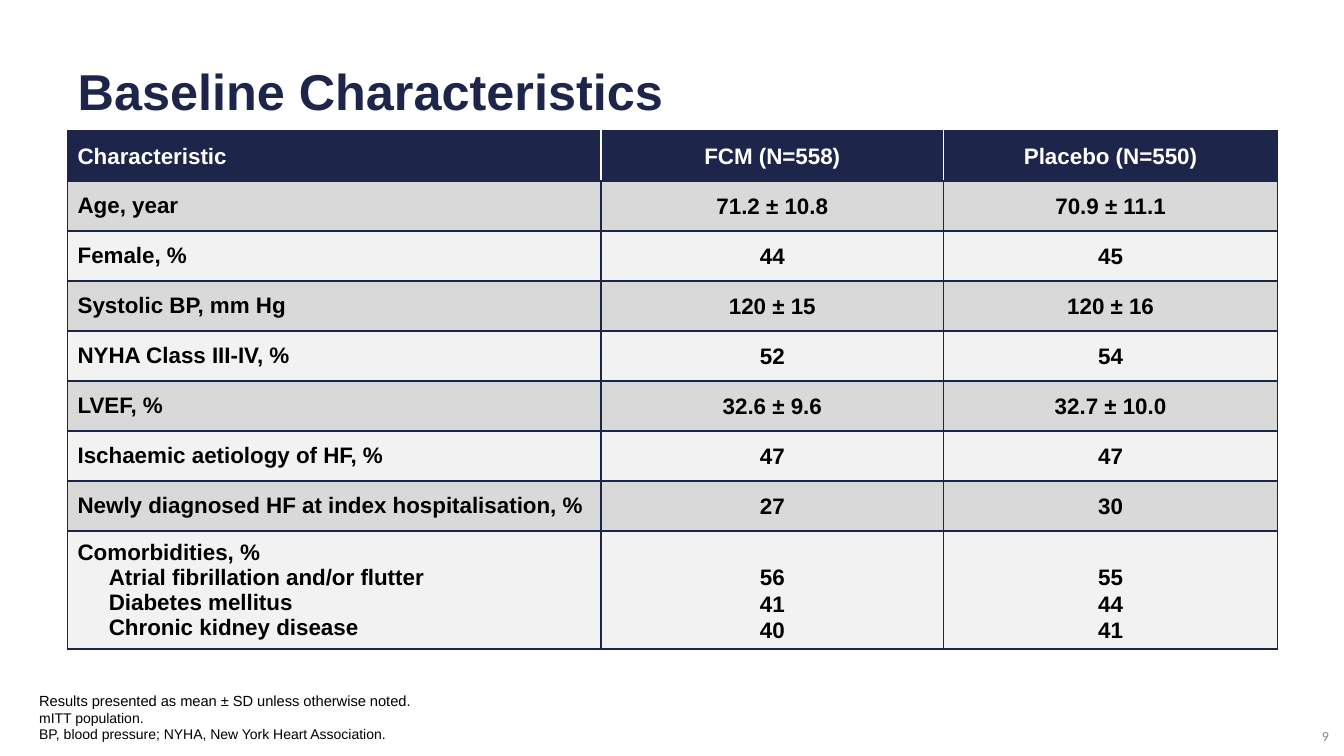
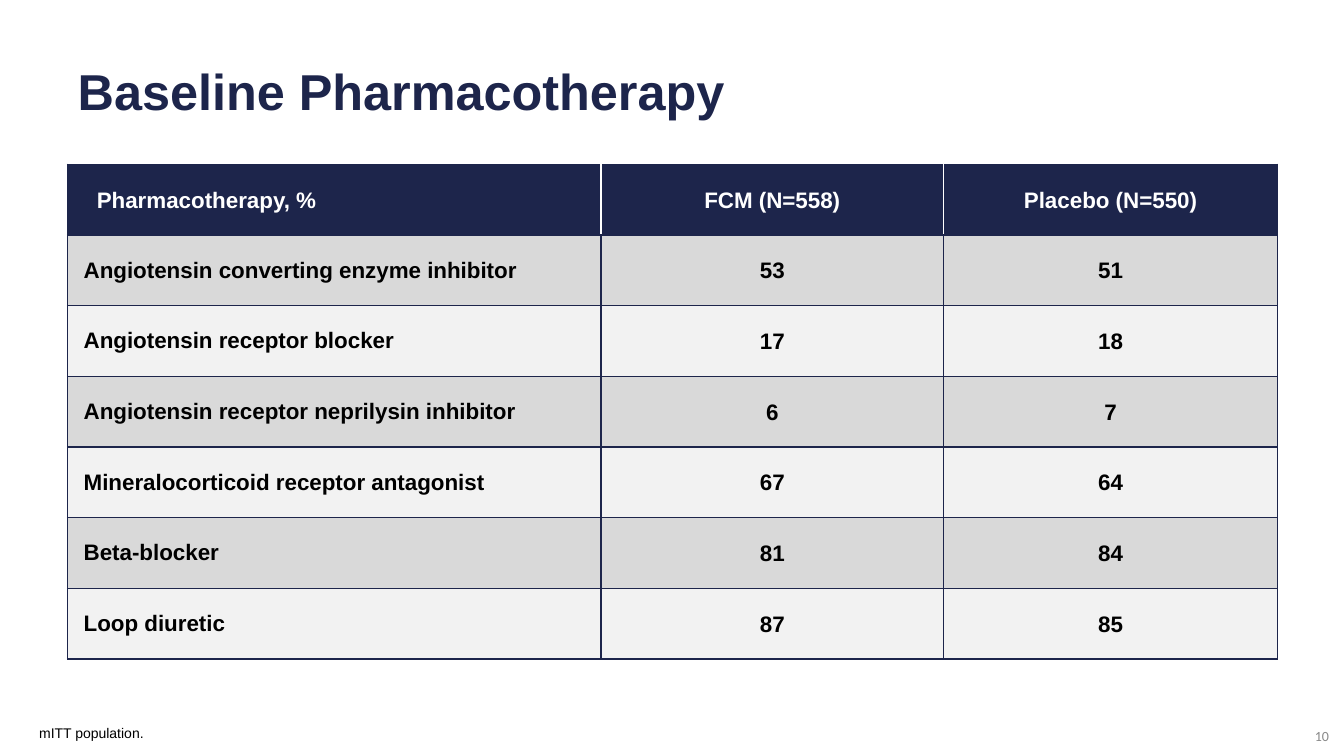
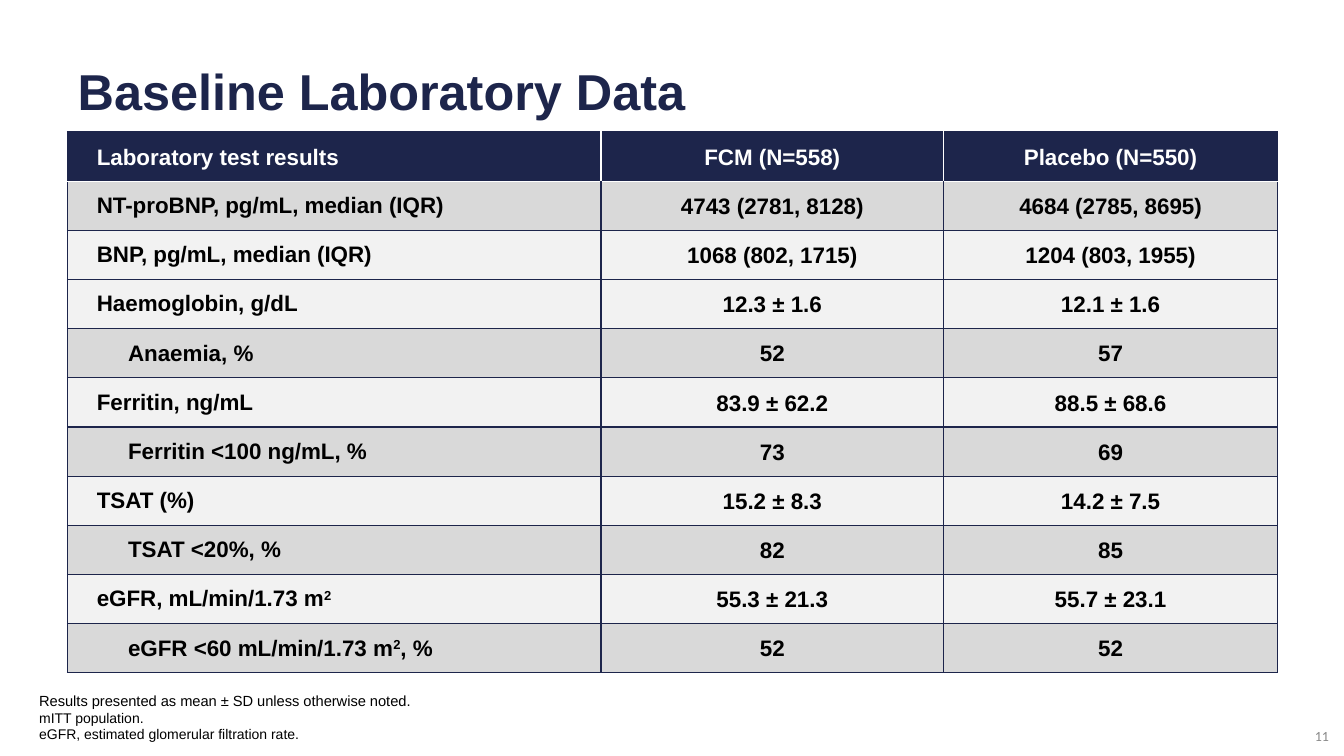
from lxml import etree
from pptx import Presentation
from pptx.dml.color import RGBColor as RGB
from pptx.enum.text import MSO_ANCHOR as ANCHOR, PP_ALIGN as ALIGN
from pptx.oxml.ns import qn
from pptx.util import Pt

PX = 9144  # 100 px to the inch
COLORS = {
    "navy": "1D254B", "white": "FFFFFF", "black": "000000",
    "dark": "D9D9D9", "light": "F2F2F2", "gray": "898989",
}
TITLE = {"name": "Arial", "size": Pt(36), "bold": True, "color": "navy"}
NUMBER = {"name": "Calibri", "size": Pt(10), "color": "gray"}
NOTE = {"name": "Arial", "color": "black"}
HEAD = {"name": "Arial", "size": Pt(16), "bold": True, "color": "white"}
BODY = {**HEAD, "color": "black"}

COLUMNS = [529, 340, 331]
ARMS = ["FCM (N=558)", "Placebo (N=550)"]
TALL_ROW = 117
VALUE_TOP = 27  # lowers the values by one line, below the group label
MEAN_SD = ("Results presented as mean ± SD unless otherwise noted.", 10.5)
MITT = ("mITT population.", 10)

# Each row: indent of its label, label, one value per arm.
# A line break starts a paragraph, carets enclose a superscript.
SLIDES = [
    {
        "number": 9, "title": "Baseline Characteristics",
        "top": 130, "height": 514, "margin": 2, "rule": "navy",
        "head": (0, "Characteristic"),
        "shades": ["dark", "light"] * 4,
        "rows": [
            (0, "Age, year", "71.2 ± 10.8", "70.9 ± 11.1"),
            (0, "Female, %", "44", "45"),
            (0, "Systolic BP, mm Hg", "120 ± 15", "120 ± 16"),
            (0, "NYHA Class III-IV, %", "52", "54"),
            (0, "LVEF, %", "32.6 ± 9.6", "32.7 ± 10.0"),
            (0, "Ischaemic aetiology of HF, %", "47", "47"),
            (0, "Newly diagnosed HF at index hospitalisation, %", "27", "30"),
            (0, "Comorbidities, %\nAtrial fibrillation and/or flutter\n"
                "Diabetes mellitus\nChronic kidney disease",
             "56\n41\n40", "55\n44\n41"),
        ],
        "note_box": (29, 681, 1261, 61),
        "notes": [MEAN_SD, MITT,
                  ("BP, blood pressure; NYHA, New York Heart Association.", 10)],
    },
    {
        "number": 10, "title": "Baseline Pharmacotherapy",
        "top": 163, "height": 491, "margin": 0, "rule": "navy",
        "head": (19, "Pharmacotherapy, %"),
        "shades": ["dark", "light"] * 3,
        "rows": [
            (6, "Angiotensin converting enzyme inhibitor", "53", "51"),
            (6, "Angiotensin receptor blocker", "17", "18"),
            (6, "Angiotensin receptor neprilysin inhibitor", "6", "7"),
            (6, "Mineralocorticoid receptor antagonist", "67", "64"),
            (6, "Beta-blocker", "81", "84"),
            (6, "Loop diuretic", "87", "85"),
        ],
        "note_box": (29, 714, 948, 27),
        "notes": [MITT],
    },
    {
        "number": 11, "title": "Baseline Laboratory Data",
        "top": 131, "height": 537, "margin": 0, "rule": "white",
        "head": (19, "Laboratory test results"),
        "shades": ["dark", "light"] + ["light", "dark"] * 4,
        "rows": [
            (19, "NT-proBNP, pg/mL, median (IQR)",
             "4743 (2781, 8128)", "4684 (2785, 8695)"),
            (19, "BNP, pg/mL, median (IQR)",
             "1068 (802, 1715)", "1204 (803, 1955)"),
            (19, "Haemoglobin, g/dL", "12.3 ± 1.6", "12.1 ± 1.6"),
            (50, "Anaemia, %", "52", "57"),
            (19, "Ferritin, ng/mL", "83.9 ± 62.2", "88.5 ± 68.6"),
            (50, "Ferritin <100 ng/mL, %", "73", "69"),
            (19, "TSAT (%)", "15.2 ± 8.3", "14.2 ± 7.5"),
            (50, "TSAT <20%, %", "82", "85"),
            (19, "eGFR, mL/min/1.73 m^2^", "55.3 ± 21.3", "55.7 ± 23.1"),
            (50, "eGFR <60 mL/min/1.73 m^2^, %", "52", "52"),
        ],
        "note_box": (29, 681, 1261, 61),
        "notes": [MEAN_SD, MITT,
                  ("eGFR, estimated glomerular filtration rate.", 10)],
    },
]


def add_text(p, text, style, align=ALIGN.LEFT, spacing=1.0):
    """Fill a paragraph; parts between carets become superscript."""
    p.alignment, p.line_spacing = align, spacing
    for i, part in enumerate(text.split("^")):
        if not part:
            continue
        r = p.add_run()
        r.text = part
        for key, value in style.items():
            if key == "color":
                r.font.color.rgb = RGB.from_string(COLORS[value])
            else:
                setattr(r.font, key, value)
        if i % 2:
            r.font._element.set("baseline", "30000")


def set_borders(cell, edges):
    tcPr = cell._tc.get_or_add_tcPr()
    for side, color in edges.items():
        ln = etree.SubElement(tcPr, qn(f"a:ln{side}"), w=str(Pt(1)))
        fill = etree.SubElement(ln, qn("a:solidFill"))
        etree.SubElement(fill, qn("a:srgbClr"), val=COLORS[color])


prs = Presentation()
prs.slide_width, prs.slide_height = 1333 * PX, 750 * PX

for spec_ in SLIDES:
    s = prs.slides.add_slide(prs.slide_layouts[5])

    title = s.shapes.title
    title.left, title.top, title.width, title.height = (
        v * PX for v in (67, 52, 1200, 75))
    title.text_frame.vertical_anchor = ANCHOR.MIDDLE
    add_text(title.text_frame.paragraphs[0], spec_["title"], TITLE)

    number = s.shapes.add_textbox(*(v * PX for v in (1205, 718, 123, 25)))
    number.text_frame.vertical_anchor = ANCHOR.MIDDLE
    number.text_frame.word_wrap = True
    add_text(number.text_frame.paragraphs[0], str(spec_["number"]), NUMBER,
             ALIGN.RIGHT)

    rows = [(*spec_["head"], *ARMS)] + spec_["rows"]
    shades = ["navy"] + spec_["shades"]
    tall = ["\n" in row[1] for row in rows]
    row_height = (spec_["height"] - TALL_ROW * sum(tall)) * PX // tall.count(False)
    table = s.shapes.add_table(
        len(rows), len(COLUMNS), 67 * PX, spec_["top"] * PX,
        sum(COLUMNS) * PX, spec_["height"] * PX).table
    table.first_row = table.horz_banding = False
    for column, width in zip(table.columns, COLUMNS):
        column.width = width * PX

    for i, (indent, *texts) in enumerate(rows):
        table.rows[i].height = TALL_ROW * PX if tall[i] else row_height
        for j, text in enumerate(texts):
            cell = table.cell(i, j)
            set_borders(cell, {
                "L": "white" if i == 0 and j > 0 else "navy",
                "R": "white" if i == 0 and j < len(COLUMNS) - 1 else "navy",
                "T": spec_["rule"] if i == 1 else "navy",
                "B": spec_["rule"] if i == 0 else "navy",
            })
            cell.fill.solid()
            cell.fill.fore_color.rgb = RGB.from_string(COLORS[shades[i]])
            cell.vertical_anchor = ANCHOR.MIDDLE
            cell.margin_left = cell.margin_right = 10 * PX
            cell.margin_top = cell.margin_bottom = spec_["margin"] * PX
            if tall[i] and j > 0:
                cell.margin_top += VALUE_TOP * PX
            tf = cell.text_frame
            for k, line in enumerate(text.split("\n")):
                p = tf.add_paragraph() if k else tf.paragraphs[0]
                if j == 0:
                    left = indent + (31 if k else 0)
                    p._p.get_or_add_pPr().set("marL", str(left * PX))
                add_text(p, line, BODY if i else HEAD,
                         ALIGN.CENTER if j else ALIGN.LEFT,
                         1.07 if j or i == 0 else 1.0)

    notes = s.shapes.add_textbox(*(v * PX for v in spec_["note_box"]))
    tf = notes.text_frame
    tf.word_wrap = True
    for k, (line, size) in enumerate(spec_["notes"]):
        p = tf.add_paragraph() if k else tf.paragraphs[0]
        add_text(p, line, {**NOTE, "size": Pt(size)})

prs.save("out.pptx")
